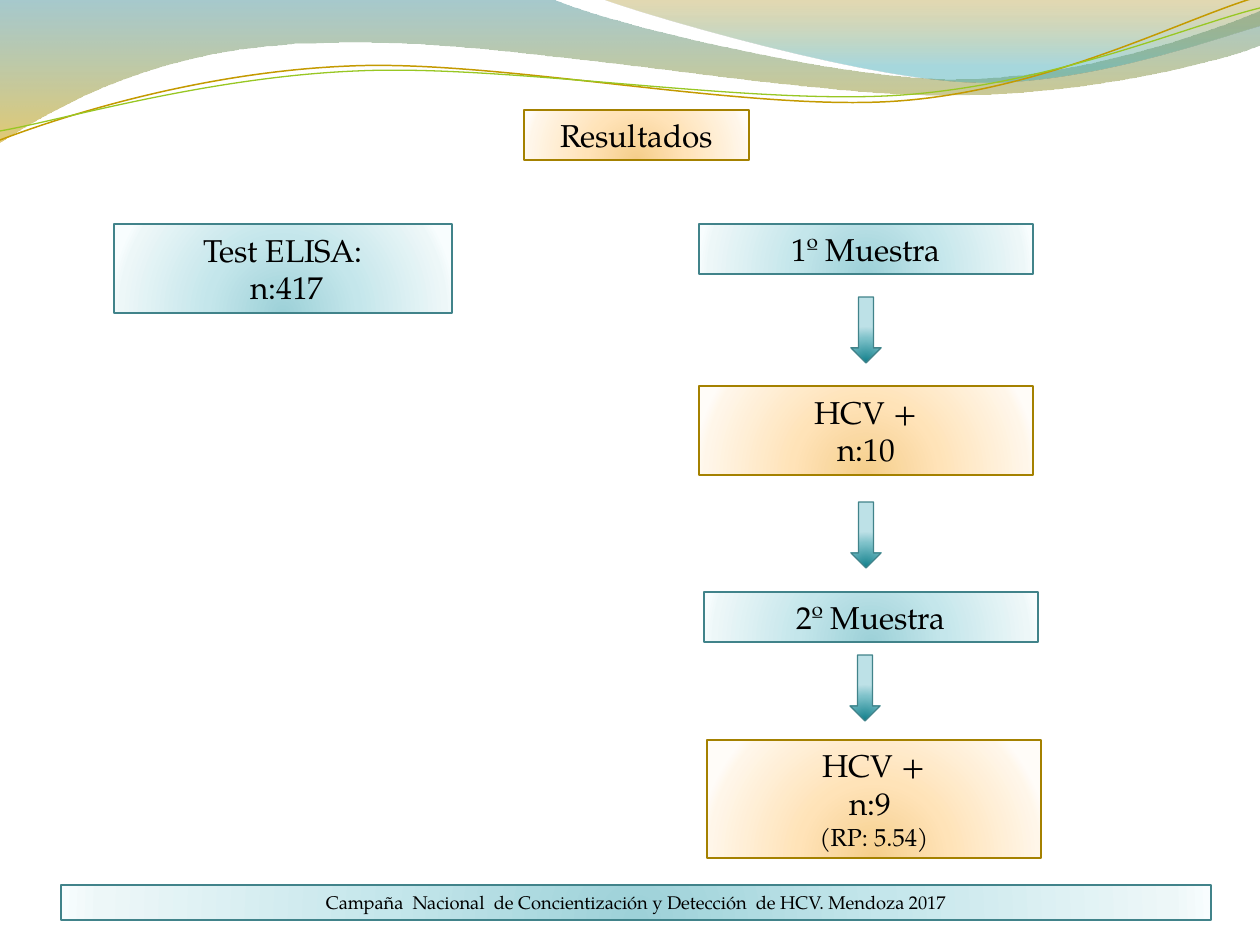
"""Build the HCV campaign results slide with its flow of samples."""
from lxml import etree
from pptx import Presentation
from pptx.dml.color import RGBColor
from pptx.enum.shapes import MSO_SHAPE
from pptx.enum.text import MSO_ANCHOR, MSO_AUTO_SIZE, PP_ALIGN
from pptx.oxml import parse_xml
from pptx.util import Emu, Pt

RECT, ARROW = MSO_SHAPE.RECTANGLE, MSO_SHAPE.DOWN_ARROW
MIDDLE, CENTER = MSO_ANCHOR.MIDDLE, PP_ALIGN.CENTER
FIXED = MSO_AUTO_SIZE.NONE
PX = 914400 / 126
FONT = "TeX Gyre Pagella"
NS = "http://schemas.openxmlformats.org/drawingml/2006/main"
LINEAR = '<a:lin ang="5400000" scaled="0"/>'
RADIAL = ('<a:path path="circle"><a:fillToRect l="50000" t="130000" '
          'r="50000" b="-30000"/></a:path>')
TEAL = [(0, "9DD1D8", 100), (43, "C4E6EB", 100), (93, "EDF7F8", 100), (100, "F8FDFE", 100)]
ORANGE = [(0, "F5CE8B", 100), (43, "FFE3B8", 100), (93, "FFF6E9", 100), (100, "FFFCF8", 100)]
DEEP = [(0, "107F8B", 100), (68, "7EC2CA", 100), (100, "BDE1E7", 100)]
TEAL_LINE, ORANGE_LINE = "41838A", "A48100"


def rgb(value):
    return RGBColor.from_string(value)


def paint(sp, stops, shade, line=None, width=0.75):
    sp.shadow.inherit = False
    sp.fill.background()
    if stops:
        grad = parse_xml(f'<a:gradFill xmlns:a="{NS}" rotWithShape="1">'
                         f'<a:gsLst/>{shade}</a:gradFill>')
        for pos, color, alpha in stops:
            gs = etree.SubElement(grad[0], f"{{{NS}}}gs", pos=str(pos * 1000))
            clr = etree.SubElement(gs, f"{{{NS}}}srgbClr", val=color)
            if alpha < 100:
                etree.SubElement(clr, f"{{{NS}}}alpha", val=str(alpha * 1000))
        spPr = sp._element.spPr
        spPr.replace(spPr.find(f"{{{NS}}}noFill"), grad)
    if line:
        sp.line.color.rgb = rgb(line)
        sp.line.width = Pt(width)
    else:
        sp.line.fill.background()


prs = Presentation()
prs.slide_width, prs.slide_height = Emu(round(1260 * PX)), Emu(round(945 * PX))
slide = prs.slides.add_slide(prs.slide_layouts[5])
shapes = slide.shapes

waves = [
    ([(0, 0), (554, 0), (600, 21, 837, 79, 955, 79), (1075, 79, 1207, 33, 1260, 11),
      (1260, 45), (1239, 55, 1096, 96, 940, 95), (784, 95, 481, 35, 324, 43),
      (163, 45, 58, 105, 0, 142)],
     [(0, "3B8890", 45), (100, "C99E00", 55)], None, 0),
    ([(604, 0), (641, 14, 859, 78, 969, 82), (1079, 87, 1211, 40, 1260, 26), (1260, 0)],
     [(0, "A48100", 30), (80, "3EA9B4", 45)], None, 0),
    ([(0, 140), (60, 117, 199, 72, 349, 66), (498, 59, 747, 112, 898, 101),
      (1049, 90, 1182, 19, 1257, -3)], None, "C49A00", 0.85),
    ([(0, 131), (59, 121, 207, 77, 357, 71), (508, 64, 752, 106, 903, 95),
      (1053, 84, 1187, 26, 1260, 8)], None, "98C723", 0.75),
]
for segments, stops, line, width in waves:
    ends = [(round(seg[-2] * PX), round(seg[-1] * PX)) for seg in segments]
    fb = shapes.build_freeform(*ends[0])
    fb.add_line_segments(ends[1:], close=stops is not None)
    sp = fb.convert_to_shape()
    straight = list(sp._element.spPr.iter(f"{{{NS}}}lnTo"))
    for old, seg in zip(straight, segments[1:]):
        if len(seg) == 6:
            curve = etree.Element(f"{{{NS}}}cubicBezTo")
            for x, y in zip(seg[::2], seg[1::2]):
                etree.SubElement(curve, f"{{{NS}}}pt", x=str(round(x * PX) - sp.left),
                                 y=str(round(y * PX) - sp.top))
            old.getparent().replace(old, curve)
    paint(sp, stops, LINEAR, line, width)

boxes = [
    (524, 110, 225, 50, ORANGE, ORANGE_LINE, [("Resultados", 18)]),
    (114, 224, 338, 89, TEAL, TEAL_LINE, [("Test ELISA:", 18), (" n:417", 18)]),
    (699, 224, 334, 50, TEAL, TEAL_LINE, [("1º Muestra", 18)]),
    (699, 386, 334, 89, ORANGE, ORANGE_LINE, [("HCV +", 18), ("n:10", 18)]),
    (704, 592, 334, 50, TEAL, TEAL_LINE, [("2º Muestra", 18)]),
    (707, 740, 334, 118, ORANGE, ORANGE_LINE,
     [("HCV +", 18), ("n:9 ", 18), ("(RP: 5.54)", 14)]),
    (61, 885, 1150, 35, TEAL, TEAL_LINE,
     [("Campaña  Nacional  de Concientización y Detección  de HCV. Mendoza 2017", 10.5)]),
]
for n, (x, y, w, h, stops, line, rows) in enumerate(boxes):
    sp = shapes.add_shape(RECT, 0, 0, 0, 0) if n else shapes.title
    sp.left, sp.top, sp.width, sp.height = (Emu(round(v * PX)) for v in (x, y, w, h))
    paint(sp, stops, RADIAL, line)
    tf = sp.text_frame
    tf.word_wrap = True
    tf.auto_size = FIXED
    tf.vertical_anchor = MIDDLE
    tf.text = "\n".join(text for text, size in rows)
    for p, (text, size) in zip(tf.paragraphs, rows):
        p.alignment = CENTER
        font = p.runs[0].font
        font.name, font.size = FONT, Pt(size)
        font.color.rgb = rgb("000000")

for x, y in [(851, 297), (851, 502), (850, 655)]:
    sp = shapes.add_shape(ARROW, *(Emu(round(v * PX)) for v in (x, y, 30, 66)))
    paint(sp, DEEP, RADIAL, TEAL_LINE)

prs.save("out.pptx")
